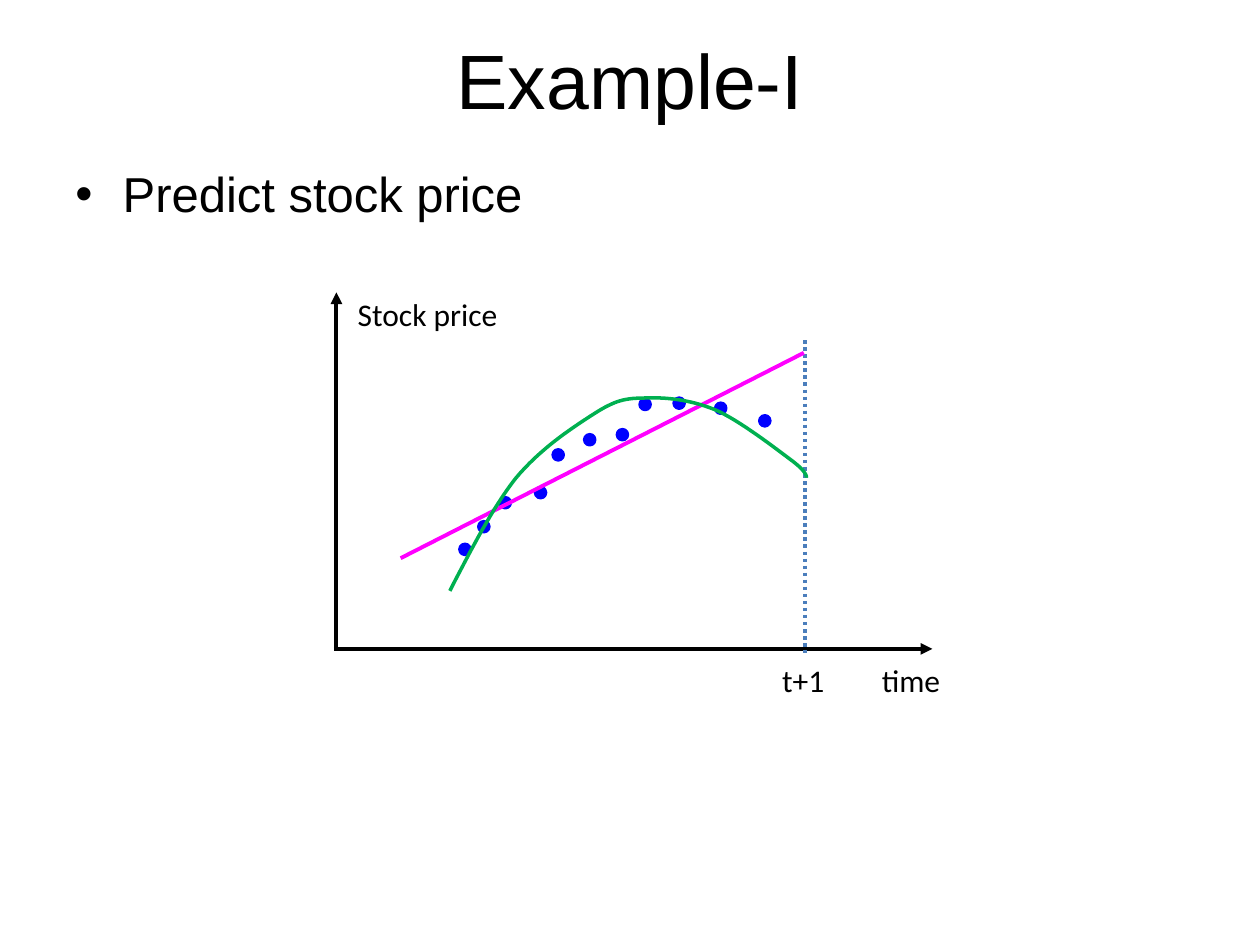
from dataclasses import dataclass
from lxml.etree import SubElement
from pptx import Presentation
from pptx.dml.color import RGBColor
from pptx.enum.dml import MSO_LINE
from pptx.enum.shapes import MSO_CONNECTOR, MSO_SHAPE
from pptx.enum.text import MSO_ANCHOR, PP_ALIGN
from pptx.oxml.ns import qn
from pptx.util import Inches, Pt


@dataclass(frozen=True)
class Theme:
    ink: str = "000000"
    dot: str = "0000FF"
    trend: str = "FF00FF"
    curve: str = "00B050"
    guide: str = "4B7EBC"
    head: str = "Arial"
    note: str = "Calibri"
    title: int = 44
    body: int = 28
    label: int = 18
    bold: float = 2.25
    thin: float = 2


@dataclass(frozen=True)
class Box:
    left: float
    top: float
    width: float
    height: float

    def at(self, x, y):
        return unit(self.left + x), unit(self.top + y)

    def frame(self):
        return [unit(n) for n in (self.left, self.top, self.width, self.height)]


WIDTH, HEIGHT = 10, 7.5
COLS = 100
THEME = Theme()

DOTS = [(10.2, 20.4), (11.7, 18.6), (13.4, 16.7), (16.2, 15.9),
        (17.6, 12.9), (20.1, 11.7), (22.7, 11.3), (24.5, 8.9),
        (27.2, 8.8), (30.5, 9.2), (34, 10.2)]
START = (9, 23.7)
BENDS = [((10.7, 20.4), (12.4, 17.1), (14.2, 14.8)),
         ((16.1, 12.5), (18.5, 10.9), (20.2, 9.8)),
         ((21.9, 8.7), (22.7, 8.4), (24.3, 8.4)),
         ((26, 8.3), (28, 8.5), (30, 9.3)),
         ((31.9, 10.1), (35, 12.5), (36.2, 13.4)),
         ((37.4, 14.3), (37.3, 14.7), (37.3, 14.7))]
LABELS = [("t+1", 34.4, 28.8, 5.4), ("time", 42.3, 28.8, 6.7),
          ("Stock price", 0.7, -0.3, 13.2)]


def unit(n):
    return Inches(n * WIDTH / COLS)


def tint(name):
    return RGBColor.from_string(name)


def style(para, font, size):
    for run in para.runs:
        run.font.name = font
        run.font.size = Pt(size)
        run.font.color.rgb = tint(THEME.ink)


def stroke(shape, color, width):
    shape.line.color.rgb = tint(color)
    shape.line.width = Pt(width)


def add_line(slide, box, start, end, color, width, arrow=False):
    line = slide.shapes.add_connector(
        MSO_CONNECTOR.STRAIGHT, *box.at(*start), *box.at(*end))
    stroke(line, color, width)
    if arrow:
        SubElement(line.line._get_or_add_ln(), qn("a:tailEnd"), type="triangle")
    SubElement(line._element.spPr, qn("a:effectLst"))
    return line


def add_title(slide, box, text):
    title = slide.shapes.title
    title.left, title.top, title.width, title.height = box.frame()
    frame = title.text_frame
    frame.text = text
    frame.vertical_anchor = MSO_ANCHOR.MIDDLE
    para = frame.paragraphs[0]
    para.alignment = PP_ALIGN.CENTER
    style(para, THEME.head, THEME.title)


def add_body(slide, box, text):
    frame = slide.shapes.add_textbox(*box.frame()).text_frame
    frame.word_wrap = True
    frame.text = text
    para = frame.paragraphs[0]
    para.space_before = Pt(2)
    style(para, THEME.head, THEME.body)
    props = para._p.get_or_add_pPr()
    props.set("marL", str(unit(3.75)))
    props.set("indent", str(-unit(3.75)))
    SubElement(props, qn("a:buFont"), typeface=THEME.head)
    SubElement(props, qn("a:buChar"), char="•")


def add_dot(slide, box, x, y, size=0.8):
    spot = Box(box.left + x - size / 2, box.top + y - size / 2, size, size)
    dot = slide.shapes.add_shape(MSO_SHAPE.OVAL, *spot.frame())
    dot.shadow.inherit = False
    dot.fill.solid()
    dot.fill.fore_color.rgb = tint(THEME.dot)
    stroke(dot, THEME.dot, THEME.thin)


def add_label(slide, box, text, x, y, width):
    spot = Box(box.left + x, box.top + y, width, 4)
    frame = slide.shapes.add_textbox(*spot.frame()).text_frame
    frame.word_wrap = False
    frame.text = text
    style(frame.paragraphs[0], THEME.note, THEME.label)


def bezier(knots, t):
    shares = ((1 - t) ** 3, 3 * t * (1 - t) ** 2, 3 * t * t * (1 - t), t ** 3)
    return [sum(s * k[axis] for s, k in zip(shares, knots)) for axis in (0, 1)]


def add_curve(slide, box, start, bends, steps=16):
    points, last = [], start
    for bend in bends:
        points += [box.at(*bezier((last, *bend), n / steps))
                   for n in range(1, steps + 1)]
        last = bend[-1]
    pen = slide.shapes.build_freeform(*box.at(*start))
    pen.add_line_segments(points, close=False)
    curve = pen.convert_to_shape()
    curve.shadow.inherit = False
    curve.fill.background()
    stroke(curve, THEME.curve, THEME.thin)


def add_plot(slide, box):
    base = box.height
    add_line(slide, box, (0, base), (0, 0), THEME.ink, THEME.bold, True)
    add_line(slide, box, (-0.2, base), (box.width, base),
             THEME.ink, THEME.bold, True)
    for x, y in DOTS:
        add_dot(slide, box, x, y)
    guide = add_line(slide, box, (37.2, 3.8), (37.2, base + 0.3), THEME.guide, 0)
    guide.line.dash_style = MSO_LINE.ROUND_DOT
    for label in LABELS:
        add_label(slide, box, *label)
    add_line(slide, box, (5.1, 21.1), (37.1, 4.8), THEME.trend, THEME.bold)
    add_curve(slide, box, START, BENDS)


def main():
    deck = Presentation()
    deck.slide_width, deck.slide_height = Inches(WIDTH), Inches(HEIGHT)
    slide = deck.slides.add_slide(deck.slide_layouts[5])
    add_title(slide, Box(5, 0, 90, 12.5), "Example-I")
    add_body(slide, Box(5, 12.5, 84.2, 54.5), "Predict stock price")
    add_plot(slide, Box(26.7, 23.2, 47.3, 28.3))
    deck.save("out.pptx")


if __name__ == "__main__":
    main()
